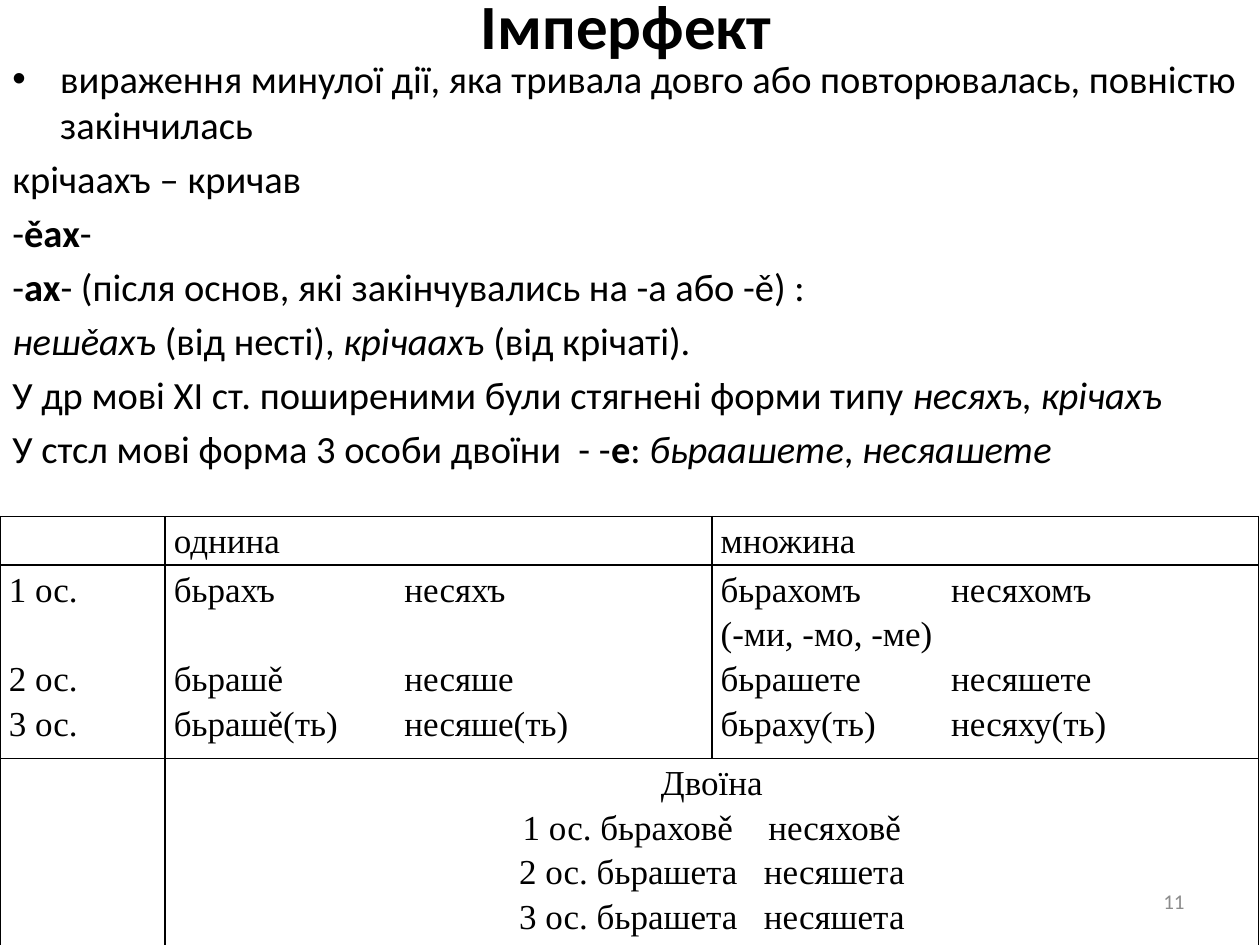
"""Build a slide on the imperfect tense with its conjugation table."""
import pptx
import pptx.dml.color
import pptx.enum.text
import pptx.oxml.ns
import pptx.util
from lxml import etree

Inches = pptx.util.Inches
Pt = pptx.util.Pt
ALIGN = pptx.enum.text.PP_ALIGN
ANCHOR = pptx.enum.text.MSO_ANCHOR
BLACK = pptx.dml.color.RGBColor(0, 0, 0)
GRAY = pptx.dml.color.RGBColor(0x8C, 0x8C, 0x8C)
TABLE_TAB = 1.83

RULES = [
    ["вираження минулої дії, яка тривала довго або повторювалась, повністю закінчилась"],
    ["крічаахъ – кричав"],
    ["-", ("ěах", "bold"), "-"],
    ["-", ("ах", "bold"), "- (після основ, які закінчувались на -а або -ě) :"],
    [("нешěахъ", "italic"), " (від несті), ", ("крічаахъ", "italic"), " (від крічаті)."],
    ["У др мові XI ст. поширеними були стягнені форми типу ", ("несяхъ, крічахъ", "italic")],
    ["У стсл мові форма 3 особи двоїни  - -", ("е", "bold"), ": ",
     ("бьраашете", "italic"), ", ", ("несяашете", "italic")],
]
SINGULAR = ["бьрахъ\tнесяхъ", "бьрашě\tнесяше", "бьрашě(ть)\tнесяше(ть)"]
PLURAL = ["бьрахомъ\tнесяхомъ", "(-ми, -мо, -ме)", "бьрашете\tнесяшете", "бьраху(ть)\tнесяху(ть)"]
DUAL = [
    ("1 ос. бьраховě", "несяховě", 15),
    ("2 ос. бьрашета", "несяшета", 10),
    ("3 ос. бьрашета", "несяшета", 10),
]


def add_element(parent, tag, **attributes):
    element = etree.SubElement(parent, pptx.oxml.ns.qn(tag))
    for name, value in attributes.items():
        element.set(name, str(value))
    return element


def write(para, text, font="Calibri", size=22, color=BLACK, bold=False, italic=False, spacing=0):
    span = para.add_run()
    span.text = text
    span.font.name, span.font.size = font, Pt(size)
    span.font.color.rgb = color
    span.font.bold, span.font.italic = bold, italic
    if spacing:
        span._r.get_or_add_rPr().set("spc", str(spacing * 100))


def next_para(frame, first):
    return frame.paragraphs[0] if first else frame.add_paragraph()


class SlideBuilder:
    """Hold the style and the current page."""

    def __init__(self, deck):
        self.page = deck.slides.add_slide(deck.slide_layouts[6])
        self.table_style = {"font": "Times New Roman", "size": 20}

    def frame(self, left, top, width, height, anchor=ANCHOR.TOP):
        box = self.page.shapes.add_textbox(*map(Inches, (left, top, width, height)))
        box.text_frame.word_wrap = True
        box.text_frame.vertical_anchor = anchor
        return box.text_frame

    def label(self, area, text, align, **style):
        para = self.frame(*area, anchor=ANCHOR.MIDDLE).paragraphs[0]
        para.alignment = align
        write(para, text, **style)

    def rules(self, area, rules):
        frame = self.frame(*area)
        for index, spans in enumerate(rules):
            para = next_para(frame, index == 0)
            para.space_before = Pt(4.4)
            properties = para._p.get_or_add_pPr()
            properties.set("marL", str(Inches(0.38)))
            properties.set("indent", str(-Inches(0.38)))
            if index == 0:
                add_element(properties, "a:buFont", typeface="Arial")
                add_element(properties, "a:buChar", char="•")
            else:
                add_element(properties, "a:buNone")
            for span in spans:
                text, face = (span, None) if isinstance(span, str) else span
                write(para, text, bold=face == "bold", italic=face == "italic")

    def table(self, left, top, widths, heights):
        shape = self.page.shapes.add_table(
            len(heights), len(widths),
            *map(Inches, (left, top, sum(widths), sum(heights))))
        table = shape.table
        table.first_row = table.horz_banding = False
        for column, width in zip(table.columns, widths):
            column.width = Inches(width)
        for row, height in zip(table.rows, heights):
            row.height = Inches(height)
        for cell in table.iter_cells():
            self.style_cell(cell)
        return table

    def style_cell(self, cell):
        cell.margin_left = cell.margin_right = Inches(0.07)
        cell.margin_top = cell.margin_bottom = 0
        properties = cell._tc.get_or_add_tcPr()
        for side in ("L", "R", "T", "B"):
            line = add_element(properties, f"a:ln{side}", w=Pt(1))
            add_element(add_element(line, "a:solidFill"), "a:srgbClr", val=BLACK)
        cell.fill.background()

    def cell_para(self, cell, first, align):
        para = next_para(cell.text_frame, first)
        para.line_spacing = 1.15
        para.alignment = align
        return para

    def cell_lines(self, cell, lines, gap_after_first=False):
        for index, text in enumerate(lines):
            para = self.cell_para(cell, index == 0, ALIGN.JUSTIFY)
            if gap_after_first and index == 1:
                para.space_before = Pt(25.5)
            if "\t" in text:
                stops = add_element(para._p.get_or_add_pPr(), "a:tabLst")
                add_element(stops, "a:tab", pos=Inches(TABLE_TAB), algn="l")
            write(para, text, **self.table_style)

    def cell_pairs(self, cell, heading, pairs):
        write(self.cell_para(cell, True, ALIGN.CENTER), heading, **self.table_style)
        for left, right, gap in pairs:
            para = self.cell_para(cell, False, ALIGN.CENTER)
            write(para, left, **self.table_style)
            write(para, " ", spacing=gap, **self.table_style)
            write(para, right, **self.table_style)


def main():
    deck = pptx.Presentation()
    deck.slide_width, deck.slide_height = Inches(10), Inches(7.5)
    builder = SlideBuilder(deck)
    builder.label((0.47, 0, 9, 0.39), "Імперфект", ALIGN.CENTER, size=36, bold=True)
    builder.rules((0, 0.39, 10, 3.13), RULES)

    table = builder.table(0, 4.1, [1.31, 4.34, 4.34], [0.33, 1.32, 1.32])
    builder.cell_lines(table.cell(0, 1), ["однина"])
    builder.cell_lines(table.cell(0, 2), ["множина"])
    persons = [f"{number} ос." for number in (1, 2, 3)]
    builder.cell_lines(table.cell(1, 0), persons, gap_after_first=True)
    builder.cell_lines(table.cell(1, 1), SINGULAR, gap_after_first=True)
    builder.cell_lines(table.cell(1, 2), PLURAL)
    table.cell(2, 1).merge(table.cell(2, 2))
    builder.cell_pairs(table.cell(2, 1), "Двоїна", DUAL)

    builder.label((7.17, 6.95, 2.33, 0.4), "11", ALIGN.RIGHT, size=12, color=GRAY)
    deck.save("out.pptx")


if __name__ == "__main__":
    main()
